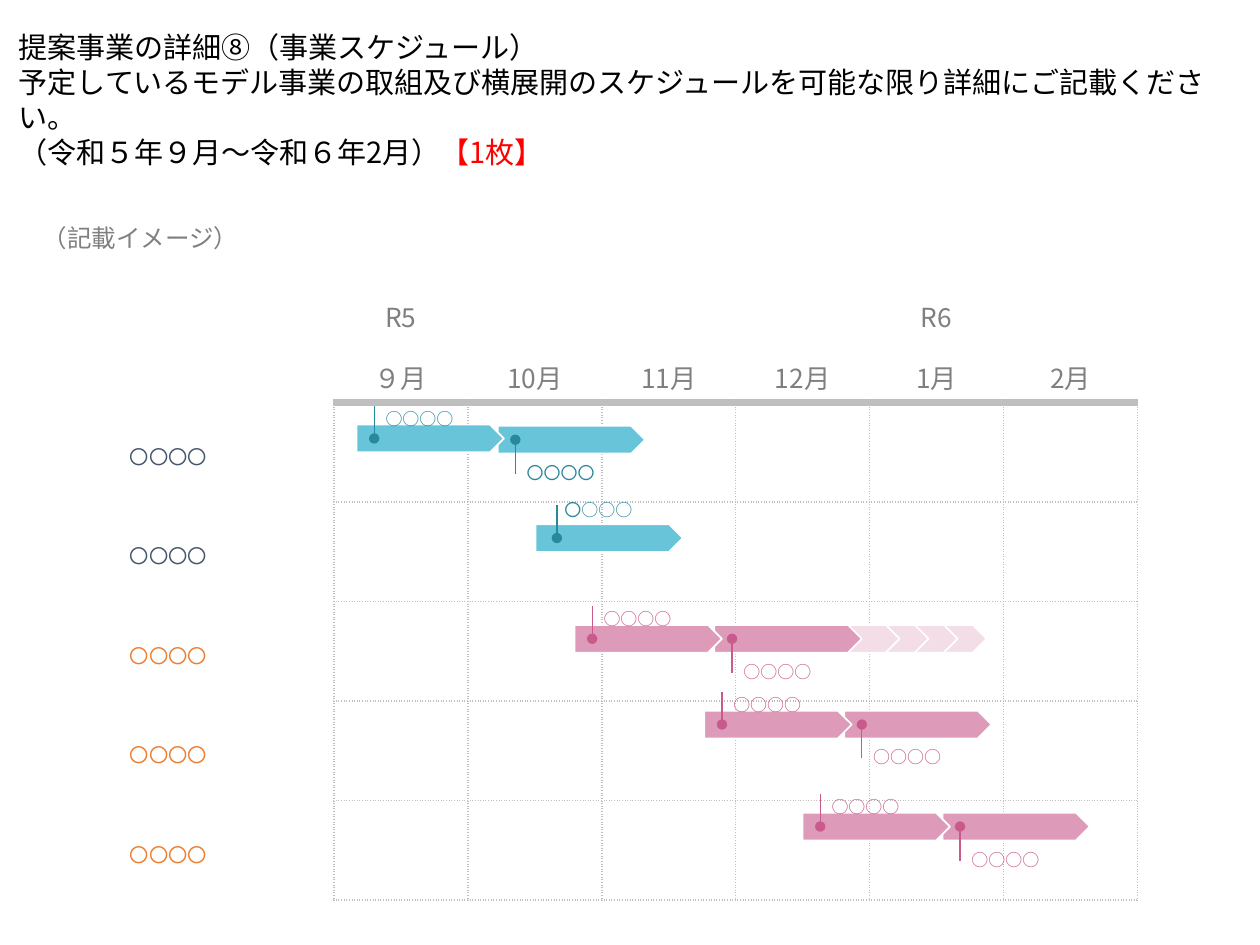
from lxml import etree
from pptx import Presentation
from pptx import util as u
from pptx.dml.color import RGBColor
from pptx.enum import shapes, text
from pptx.oxml.ns import qn

FONT = "Noto Sans CJK JP"
COLORS = {
    "white": "FFFFFF", "black": "000000", "red": "FF0000",
    "grid": "BFBFBF", "header": "7F7F7F", "note": "808080",
    "navy": "44546A", "orange": "ED7D31",
    "blue": "68C4D8", "blue_pin": "28889C",
    "pink": "DD9BB9", "pink_pin": "C85A8C", "pale": "F3DDE7",
}
THIN, THICK, EDGE = ("grid", 1, "dot"), ("grid", 4.5, "solid"), ("white", 2.25, "solid")
BAR_H = 0.22


def rgb(name):
    """Return the named colour."""
    return RGBColor.from_string(COLORS[name])


def add_run(p, words, size, color, font=FONT):
    """Add one formatted run to a paragraph."""
    r = p.add_run()
    r.text = words
    r.font.size = u.Pt(size)
    r.font.name = font
    r.font.color.rgb = rgb(color)
    ea = etree.SubElement(r.font._element, qn("a:ea"))
    ea.set("typeface", FONT)


def add_text_box(owner, x, y, w, h, wrap=True):
    """Add an empty text box and return its frame."""
    tf = owner.add_textbox(u.Inches(x), u.Inches(y), u.Inches(w), u.Inches(h)).text_frame
    tf.word_wrap = wrap
    return tf


def add_bar(owner, x, y, w, color):
    """Add a pentagon schedule bar."""
    sp = owner.add_shape(shapes.MSO_SHAPE.PENTAGON, u.Inches(x), u.Inches(y),
                         u.Inches(w), u.Inches(BAR_H))
    sp.shadow.inherit = False
    sp.fill.solid()
    sp.fill.fore_color.rgb = rgb(color)
    sp.line.color.rgb = rgb("white")
    sp.line.width = u.Pt(1)


def add_pin(owner, x, y1, y2, color, dot_end):
    """Add a vertical pin with a round dot at the given end."""
    line = owner.add_connector(shapes.MSO_CONNECTOR.STRAIGHT, u.Inches(x), u.Inches(y1),
                               u.Inches(x), u.Inches(y2))
    line.line.color.rgb = rgb(color)
    line.line.width = u.Pt(0.75)
    etree.SubElement(line.line._get_or_add_ln(), qn("a:" + dot_end)).set("type", "oval")
    etree.SubElement(line._element.spPr, qn("a:effectLst"))


def add_task(s, x, y, above, color, words="○○○○", label_w=0.8, pin_dx=0.14, rise=0.23):
    """Add a grouped bar, pin and label, with the label above or below the bar."""
    group = s.shapes.add_group_shape().shapes
    add_bar(group, x, y, 1.17, color)
    if above:
        add_pin(group, x + pin_dx, y - 0.15, y + 0.11, color + "_pin", "tailEnd")
    else:
        add_pin(group, x + pin_dx, y + 0.11, y + 0.38, color + "_pin", "headEnd")
    tf = add_text_box(group, x + 0.14, y - rise if above else y + 0.19, label_w, 0.31)
    tf.margin_left = tf.margin_right = u.Inches(0.09)
    tf.auto_size = text.MSO_AUTO_SIZE.SHAPE_TO_FIT_TEXT
    tf.vertical_anchor = text.MSO_ANCHOR.MIDDLE
    p = tf.paragraphs[0]
    p.line_spacing = 1.3
    add_run(p, words, 9.7, color + "_pin")


def set_borders(cell, left=None, right=None, top=None, bottom=None):
    """Set the four borders of a cell, None meaning no line."""
    tc_pr = cell._tc.get_or_add_tcPr()
    for i, (side, border) in enumerate(zip("LRTB", (left, right, top, bottom))):
        ln = etree.Element(qn("a:ln" + side))
        tc_pr.insert(i, ln)
        if border is None:
            etree.SubElement(ln, qn("a:noFill"))
            continue
        color, width, dash = border
        ln.set("w", str(u.Pt(width)))
        fill = etree.SubElement(ln, qn("a:solidFill"))
        etree.SubElement(fill, qn("a:srgbClr")).set("val", COLORS[color])
        etree.SubElement(ln, qn("a:prstDash")).set("val", dash)


def style_cell(cell, row, col):
    """Set the margins, fill and borders of a schedule cell."""
    cell.margin_left = cell.margin_right = u.Inches(0.09)
    cell.margin_top, cell.margin_bottom = u.Inches(0.04), u.Inches(0.05)
    if col == 0 and row < 2:
        cell.fill.background()
        set_borders(cell)
        return
    cell.fill.solid()
    cell.fill.fore_color.rgb = rgb("white")
    if col == 0:
        set_borders(cell, right=THIN)
    elif row < 2:
        set_borders(cell, None if col == 1 else EDGE, EDGE, EDGE, THICK if row else EDGE)
    else:
        set_borders(cell, THIN, THIN, THICK if row == 2 else THIN, THIN)


def add_schedule(s):
    """Add the schedule grid with its months and row labels."""
    heights = [0.38, 0.39] + [0.79] * 5
    widths = [1.71] + [6.38 / 6] * 6
    table = s.shapes.add_table(7, 7, u.Inches(0.94), u.Inches(2.23),
                               u.Inches(sum(widths)), u.Inches(sum(heights))).table
    table.first_row = table.horz_banding = False
    for col, width in enumerate(widths):
        table.columns[col].width = u.Inches(width)
    headers = [["", "R5", "", "", "", "R6", ""],
               ["", "９月", "10月", "11月", "12月", "1月", "2月"]]
    labels = ["navy"] * 2 + ["orange"] * 3
    for row, height in enumerate(heights):
        table.rows[row].height = u.Inches(height)
        for col in range(7):
            cell = table.cell(row, col)
            style_cell(cell, row, col)
            p = cell.text_frame.paragraphs[0]
            p.line_spacing = 1.3
            if row < 2 and headers[row][col]:
                p.alignment = text.PP_ALIGN.CENTER
                add_run(p, headers[row][col], 15, "header")
            elif row >= 2 and col == 0:
                cell.vertical_anchor = text.MSO_ANCHOR.MIDDLE
                add_run(p, "〇〇〇〇", 11, labels[row - 2])


def add_title(s):
    """Add the heading text."""
    tf = add_text_box(s.shapes, 0.15, 0.37, 9.58, 0.97)
    tf.margin_left = tf.margin_right = tf.margin_top = tf.margin_bottom = 0
    tf.vertical_anchor = text.MSO_ANCHOR.BOTTOM
    p = tf.paragraphs[0]
    for words in ("提案事業の詳細⑧（事業スケジュール）",
                  "予定しているモデル事業の取組及び横展開のスケジュールを可能な限り詳細にご記載ください。"):
        add_run(p, words, 16.6, "black")
        p.add_line_break()
    add_run(p, "（令和５年９月～令和６年2月）", 16.6, "black")
    add_run(p, "【1枚】", 16.6, "red")


def main():
    """Build the schedule slide."""
    prs = Presentation()
    prs.slide_width, prs.slide_height = u.Inches(10), u.Inches(7.5)
    s = prs.slides.add_slide(prs.slide_layouts[6])
    add_schedule(s)
    for i in reversed(range(4)):
        add_bar(s.shapes, 6.73 + 0.23 * i, 4.96, 0.41, "pale")
    add_task(s, 3.95, 3.38, False, "blue", "〇〇〇〇")
    add_task(s, 2.83, 3.37, True, "blue", label_w=1.14)
    add_task(s, 4.25, 4.16, True, "blue", "〇○○○", pin_dx=0.17, rise=0.29)
    add_task(s, 5.67, 4.96, False, "pink")
    add_task(s, 4.56, 4.96, True, "pink", label_w=1)
    for x, y in ((5.59, 5.64), (6.37, 6.45)):
        add_task(s, x + 1.11, y, False, "pink")
        add_task(s, x, y, True, "pink")
    add_title(s)
    note = add_text_box(s.shapes, 0.24, 1.72, 1.77, 0.34, wrap=False)
    note.auto_size = text.MSO_AUTO_SIZE.SHAPE_TO_FIT_TEXT
    add_run(note.paragraphs[0], "（記載イメージ）", 14, "note", "Calibri")
    prs.save("out.pptx")


if __name__ == "__main__":
    main()
